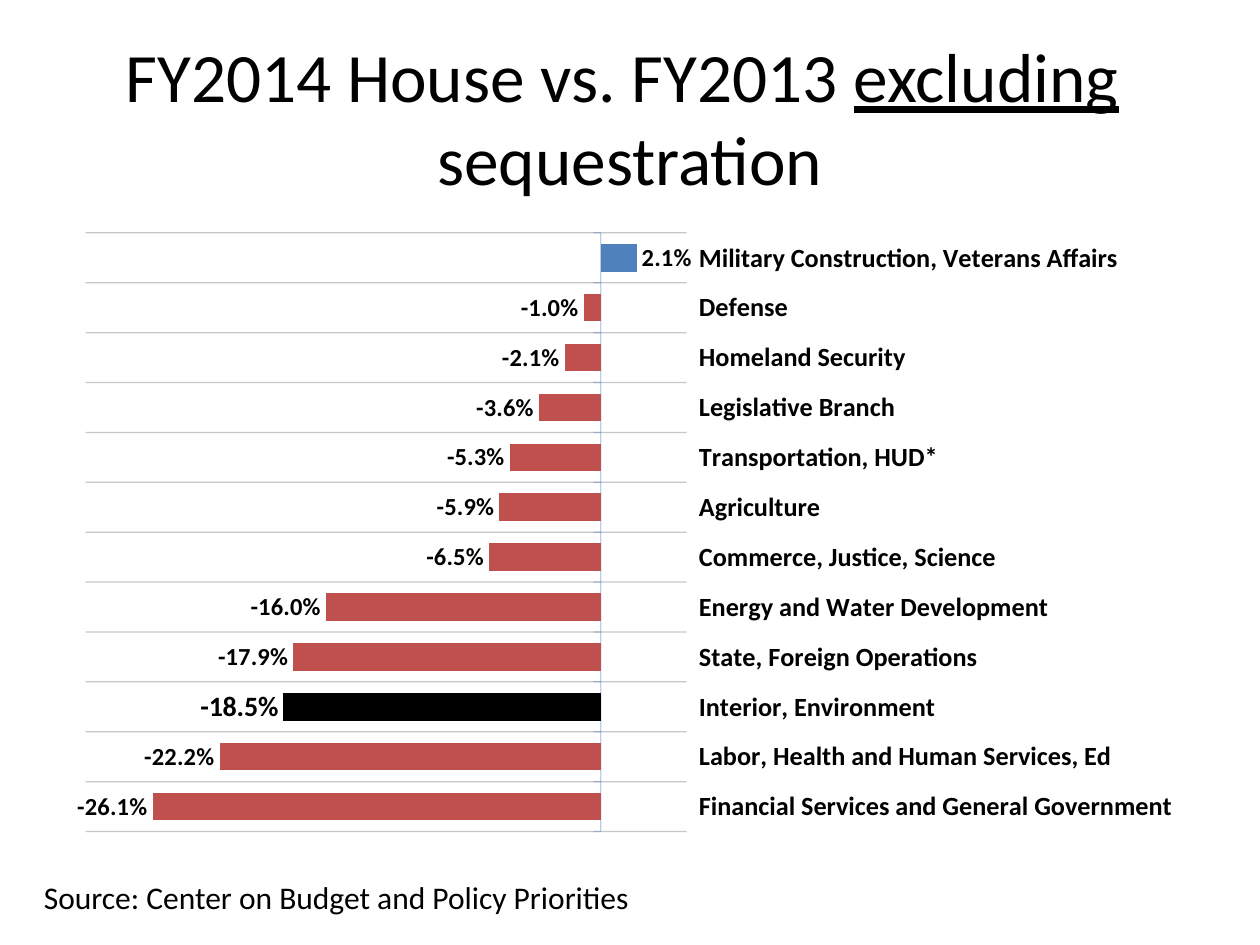
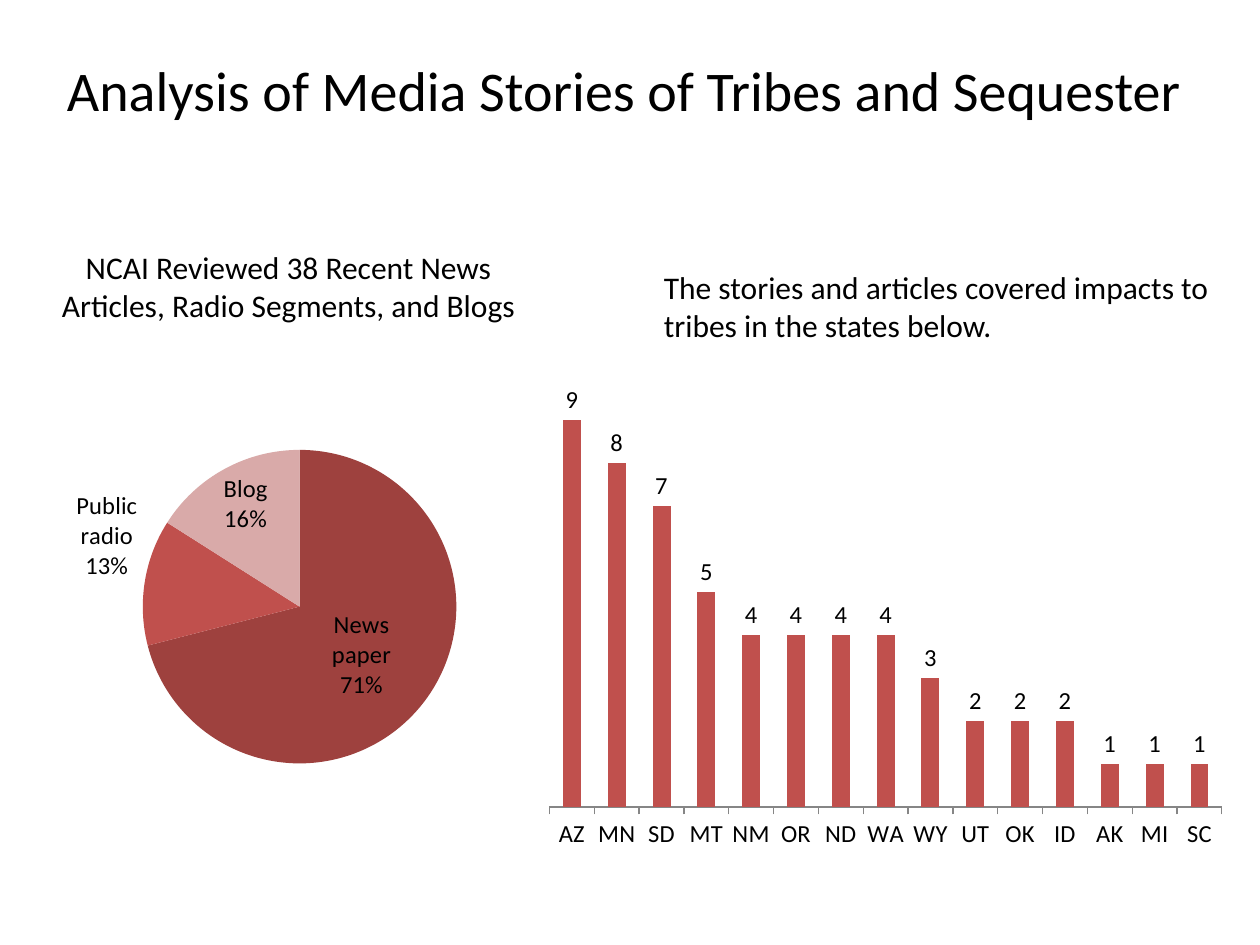
from lxml.etree import SubElement
from pptx import Presentation
from pptx.chart.data import CategoryChartData
from pptx.dml.color import RGBColor
from pptx.enum.chart import XL_CHART_TYPE as ChartType
from pptx.enum.chart import XL_LABEL_POSITION as LabelPosition
from pptx.enum.chart import XL_TICK_LABEL_POSITION as TickLabels
from pptx.enum.chart import XL_TICK_MARK as TickMark
from pptx.enum.text import MSO_ANCHOR as Anchor
from pptx.enum.text import PP_ALIGN as Align
from pptx.oxml import parse_xml
from pptx.oxml.ns import nsdecls, qn
from pptx.util import Inches, Pt

FONT = "Calibri"
BLACK = RGBColor(0x00, 0x00, 0x00)
BLUE = RGBColor(0x4F, 0x81, 0xBD)
RED = RGBColor(0xC0, 0x50, 0x4D)
DARK_RED = RGBColor(0x9E, 0x41, 0x3E)
PALE_RED = RGBColor(0xD9, 0xAA, 0xA9)
GRID_GREY = RGBColor(0xA6, 0xA6, 0xA6)
AXIS_GREY = RGBColor(0x86, 0x86, 0x86)

BUDGET_CHANGES = {
    "Financial Services and General Government": -0.261,
    "Labor, Health and Human Services, Ed": -0.222,
    "Interior, Environment": -0.185,
    "State, Foreign Operations": -0.179,
    "Energy and Water Development": -0.16,
    "Commerce, Justice, Science": -0.065,
    "Agriculture": -0.059,
    "Transportation, HUD*": -0.053,
    "Legislative Branch": -0.036,
    "Homeland Security": -0.021,
    "Defense": -0.01,
    "Military Construction, Veterans Affairs": 0.021,
}
MEDIA_SHARES = {"Newspaper": 71, "Public radio": 13, "Blog": 16}
STATE_STORIES = {
    "AZ": 9, "MN": 8, "SD": 7, "MT": 5, "NM": 4, "OR": 4, "ND": 4, "WA": 4,
    "WY": 3, "UT": 2, "OK": 2, "ID": 2, "AK": 1, "MI": 1, "SC": 1,
}


def add_text(slide, text, box, size=18, align=Align.LEFT, anchor=Anchor.TOP, underlined=""):
    """Add a wrapped text box, underlining one phrase of its text if asked."""
    frame = slide.shapes.add_textbox(*map(Inches, box)).text_frame
    frame.word_wrap = True
    frame.vertical_anchor = anchor
    paragraph = frame.paragraphs[0]
    paragraph.alignment = align
    for part in text.partition(underlined) if underlined else (text,):
        run = paragraph.add_run()
        run.text = part
        run.font.name = FONT
        run.font.size = Pt(size)
        run.font.color.rgb = BLACK
        if part == underlined:
            run.font.underline = True


def add_title(slide, text, box, size, underlined=""):
    """Add a centred slide title."""
    add_text(slide, text, box, size, Align.CENTER, Anchor.MIDDLE, underlined)


def set_plot_area(chart, x, y, width, height):
    """Place the inner plot area by fractions of the chart."""
    plot_area = chart.element.find(".//" + qn("c:plotArea"))
    for old_layout in plot_area.findall(qn("c:layout")):
        plot_area.remove(old_layout)
    layout = parse_xml(f"<c:layout {nsdecls('c')}><c:manualLayout/></c:layout>")
    settings = {"layoutTarget": "inner", "xMode": "edge", "yMode": "edge",
                "x": x, "y": y, "w": width, "h": height}
    for name, value in settings.items():
        SubElement(layout[0], qn(f"c:{name}")).set("val", str(value))
    plot_area.insert(0, layout)


def add_chart(slide, kind, values, box, plot_area, size=14, number_format="General"):
    """Add a one-series chart without legend or title and return it."""
    data = CategoryChartData(number_format=number_format)
    data.categories = values.keys()
    data.add_series("Series 1", values.values())
    chart = slide.shapes.add_chart(kind, *map(Inches, box), data).chart
    chart.has_legend = False
    chart.has_title = False
    chart.font.name = FONT
    chart.font.size = Pt(size)
    chart.font.color.rgb = BLACK
    set_plot_area(chart, *plot_area)
    return chart


def paint_point(series, index, color):
    """Fill one point of a series."""
    fill = series.points[index].format.fill
    fill.solid()
    fill.fore_color.rgb = color


def style_line(line, color, opacity=100):
    """Give a chart line its colour and opacity in percent."""
    line.width = Pt(0.75)
    line.color.rgb = color
    if opacity < 100:
        for color_element in line._ln.iter(qn("a:srgbClr")):
            SubElement(color_element, qn("a:alpha")).set("val", str(opacity * 1000))


def style_bars(chart, gap, low, high):
    """Format red bars with value labels and a hidden value axis."""
    plot = chart.plots[0]
    plot.gap_width = gap
    plot.vary_by_categories = False
    series = plot.series[0]
    series.invert_if_negative = False
    series.format.fill.solid()
    series.format.fill.fore_color.rgb = RED
    labels = series.data_labels
    labels.show_value = True
    labels.position = LabelPosition.OUTSIDE_END
    chart.value_axis.minimum_scale = low
    chart.value_axis.maximum_scale = high
    chart.value_axis.has_major_gridlines = False
    chart.value_axis.visible = False
    chart.category_axis.major_tick_mark = TickMark.OUTSIDE
    chart.category_axis.minor_tick_mark = TickMark.NONE
    return series


def add_budget_chart(slide):
    """Add the bars of budget change by spending bill."""
    chart = add_chart(slide, ChartType.BAR_CLUSTERED, BUDGET_CHANGES, (0.5, 1.75, 9, 4.95),
                      (0.02, 0.02, 0.53, 0.96), size=10, number_format="0.0%")
    series = style_bars(chart, 81, -0.3, 0.05)
    chart.plots[0].overlap = 54
    bills = list(BUDGET_CHANGES)
    interior = bills.index("Interior, Environment")
    paint_point(series, interior, BLACK)
    paint_point(series, bills.index("Military Construction, Veterans Affairs"), BLUE)
    labels = series.data_labels
    labels.number_format = "0.0%"
    labels.number_format_is_linked = False
    interior_label = series.points[interior].data_label
    interior_label.position = LabelPosition.OUTSIDE_END
    for font, size in ((labels.font, 14), (interior_label.font, 16),
                       (chart.category_axis.tick_labels.font, 15)):
        font.size = Pt(size)
        font.bold = True
    axis = chart.category_axis
    axis.tick_label_position = TickLabels.HIGH
    axis.has_major_gridlines = True
    style_line(axis.format.line, BLUE, 38)
    style_line(axis.major_gridlines.format.line, GRID_GREY, 62)


def add_media_pie(slide):
    """Add the pie of story shares by kind of media."""
    chart = add_chart(slide, ChartType.PIE, MEDIA_SHARES, (0.12, 3, 4.33, 3.66),
                      (0.234, 0.156, 0.575, 0.68))
    series = chart.plots[0].series[0]
    for index, color in enumerate((DARK_RED, RED, PALE_RED)):
        paint_point(series, index, color)
    labels = series.data_labels
    labels.font.size = Pt(14)
    labels.show_value = False
    labels.show_category_name = True
    labels.show_percentage = True
    labels.position = LabelPosition.BEST_FIT
    separator = parse_xml(f"<c:separator {nsdecls('c')}>\n</c:separator>")
    labels._element.findall(qn("c:showPercent"))[-1].getparent().find(
        qn("c:showBubbleSize")).addnext(separator)
    newspaper_label = series.points[0].data_label
    newspaper_label.text_frame.text = "News\npaper\n71%"
    newspaper_label.position = LabelPosition.CENTER
    for paragraph in newspaper_label.text_frame.paragraphs:
        paragraph.runs[0].font.size = Pt(14)


def add_state_chart(slide):
    """Add the columns of stories by state."""
    chart = add_chart(slide, ChartType.COLUMN_CLUSTERED, STATE_STORIES,
                      (4.25, 2.92, 5.56, 3.83), (0.02, 0.02, 0.96, 0.89))
    style_bars(chart, 150, 0, 10)
    style_line(chart.category_axis.format.line, AXIS_GREY)


def main():
    """Build both slides and save them."""
    deck = Presentation()
    deck.slide_width, deck.slide_height = Inches(10), Inches(7.5)
    blank = deck.slide_layouts[6]

    budget = deck.slides.add_slide(blank)
    add_title(budget, "FY2014 House vs. FY2013 excluding  sequestration",
              (0.5, 0.3, 9, 1.25), 39.6, underlined="excluding")
    add_budget_chart(budget)
    add_text(budget, "Source: Center on Budget and Policy Priorities", (0.25, 6.92, 5.33, 0.4))

    media = deck.slides.add_slide(blank)
    add_title(media, "Analysis of Media Stories of Tribes and Sequester",
              (0.08, 0.08, 9.75, 1.25), 32)
    add_text(media, "NCAI Reviewed 38 Recent News Articles, Radio Segments, and Blogs",
             (0.25, 1.92, 4.08, 0.71), align=Align.CENTER)
    add_text(media, "The stories and articles covered impacts to tribes in the states below.",
             (5.17, 2.08, 4.58, 0.71))
    add_media_pie(media)
    add_state_chart(media)

    deck.save("out.pptx")


if __name__ == "__main__":
    main()
